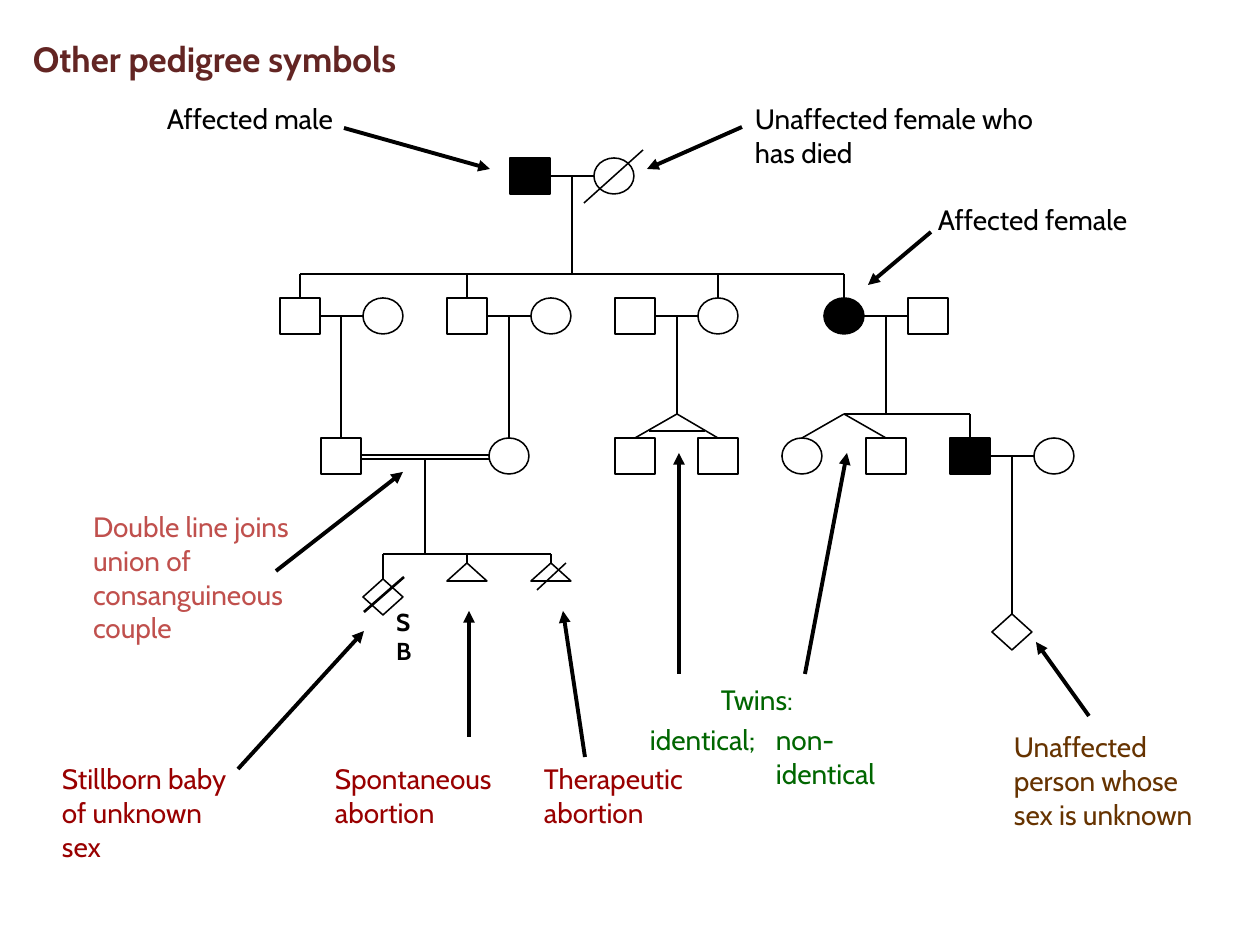
from lxml.etree import SubElement
from pptx import Presentation
from pptx.dml.color import RGBColor
from pptx.enum.shapes import MSO_CONNECTOR, MSO_SHAPE
from pptx.enum.text import MSO_ANCHOR, PP_ALIGN
from pptx.oxml.ns import qn
from pptx.util import Emu, Pt

EMU_PER_PX = 914400 / 126
FONT = "Cabin"
BLACK, WHITE = "000000", "FFFFFF"
MAROON, ROSE, RED, GREEN, BROWN = "632523", "C0504D", "990000", "006600", "663300"
THIN, BOLD = 0.88, 2.25
HALF_W, HALF_H = 20, 18
GENERATION_Y = [176, 316, 456]
SIBSHIP_Y = [274, 414, 554]
SYMBOL_TOP = [y - HALF_H for y in GENERATION_Y]

MALE, FEMALE = MSO_SHAPE.RECTANGLE, MSO_SHAPE.OVAL
UNKNOWN, LOSS = MSO_SHAPE.DIAMOND, MSO_SHAPE.ISOSCELES_TRIANGLE

# (symbol, generation, columns of unaffected people, columns of affected people)
PEOPLE = [
    (MALE, 0, [], [5.5]),
    (FEMALE, 0, [7.5], []),
    (MALE, 1, [0, 4, 8, 15], []),
    (FEMALE, 1, [2, 6, 10], [13]),
    (MALE, 2, [1, 8, 10, 14], [16]),
    (FEMALE, 2, [5, 12, 18], []),
]
# (generation, column of the left partner)
COUPLES = [(0, 5.5), (1, 0), (1, 4), (1, 8), (1, 13), (2, 16)]

# (column, top, bottom)
DESCENTS = [
    (6.5, GENERATION_Y[0], SIBSHIP_Y[0]),
    (1, GENERATION_Y[1], SYMBOL_TOP[2]),
    (5, GENERATION_Y[1], SYMBOL_TOP[2]),
    (9, GENERATION_Y[1], SIBSHIP_Y[1]),
    (14, GENERATION_Y[1], SIBSHIP_Y[1]),
    (3, 459, SIBSHIP_Y[2]),
    (17, GENERATION_Y[2], 614),
]
# (y of the line, first column, last column, {column: bottom of its drop})
SIBSHIPS = [
    (SIBSHIP_Y[0], 0, 13, {c: SYMBOL_TOP[1] for c in (0, 4, 10, 13)}),
    (SIBSHIP_Y[1], 13, 16, {16: SYMBOL_TOP[2]}),
    (SIBSHIP_Y[2], 2, 6, {2: 579, 4: 563, 6: 563}),
]
TWIN_APEXES = [9, 13]

# (start, end, width): died, therapeutic abortion, stillborn
SLASHES = [
    ((584, 203), (643, 150), THIN),
    ((566, 563), (537, 590), THIN),
    ((364, 612), (404, 577), 1.5),
]
POINTERS = [
    ((344, 128), (490, 169)), ((742, 127), (647, 169)),
    ((931, 232), (868, 285)), ((276, 571), (403, 472)),
    ((238, 769), (364, 631)), ((469, 737), (469, 611)),
    ((585, 757), (563, 611)), ((679, 674), (679, 453)),
    ((805, 674), (847, 453)), ((1089, 716), (1036, 642)),
]
# (text, left, top, width, height, colour)
LABELS = [
    ("Double line joins union of consanguineous couple", 93, 510, 205, 136, ROSE),
    ("Stillborn baby of unknown sex", 62, 762, 175, 102, RED),
    ("Spontaneous abortion", 335, 762, 170, 68, RED),
    ("Therapeutic abortion", 544, 762, 155, 68, RED),
    ("Twins:", 721, 683, 80, 34, GREEN),
    ("identical;", 650, 723, 118, 34, GREEN),
    ("non-identical", 776, 723, 125, 68, GREEN),
    ("Unaffected person whose sex is unknown", 1014, 730, 190, 102, BROWN),
]
ANNOTATIONS = [
    ("Affected male", 154, 96, 205, 47),
    ("Unaffected female who has died", 742, 96, 328, 81),
    ("Affected female", 925, 197, 229, 47),
]


def px(length):
    return Emu(round(length * EMU_PER_PX))


def color(hex_code):
    return RGBColor.from_string(hex_code)


def col(index):
    """Centre of a pedigree column, in px."""
    return round(299.5 + 41.9 * index)


def write(frame, text, size=16, rgb=BLACK, bold=False, inset=(0, 0)):
    frame.word_wrap = True
    frame.margin_left = frame.margin_right = px(inset[0])
    frame.margin_top = frame.margin_bottom = px(inset[1])
    paragraph = frame.paragraphs[0]
    paragraph.alignment = PP_ALIGN.LEFT
    run = paragraph.add_run()
    run.text = text
    run.font.name, run.font.size, run.font.bold = FONT, Pt(size), bold
    run.font.color.rgb = color(rgb)


def add_label(slide, text, left, top, width, height, **style):
    box = slide.shapes.add_textbox(px(left), px(top), px(width), px(height))
    write(box.text_frame, text, **style)


def add_title(slide, text):
    title = slide.shapes.title
    title.left, title.top, title.width, title.height = map(px, (20, 29, 916, 59))
    title.fill.solid()
    title.fill.fore_color.rgb = color(WHITE)
    title.text_frame.vertical_anchor = MSO_ANCHOR.MIDDLE
    write(title.text_frame, text, size=20, rgb=MAROON, bold=True, inset=(13, 6))


def add_symbol(slide, kind, column, top, height=2 * HALF_H, fill=None):
    symbol = slide.shapes.add_shape(
        kind, px(col(column) - HALF_W), px(top), px(2 * HALF_W), px(height))
    symbol.shadow.inherit = False
    if fill:
        symbol.fill.solid()
        symbol.fill.fore_color.rgb = color(fill)
    else:
        symbol.fill.background()
    symbol.line.color.rgb = color(BLACK)
    symbol.line.width = Pt(THIN)


def add_line(slide, start, end, width=THIN, arrow=False):
    line = slide.shapes.add_connector(
        MSO_CONNECTOR.STRAIGHT, *map(px, (*start, *end)))
    line.line.color.rgb = color(BLACK)
    line.line.width = Pt(width)
    if arrow:
        SubElement(line.line._get_or_add_ln(), qn("a:tailEnd"), type="triangle")
    SubElement(line._element.spPr, qn("a:effectLst"))


def add_people(slide):
    for kind, generation, unaffected, affected in PEOPLE:
        for columns, fill in ((unaffected, WHITE), (affected, BLACK)):
            for column in columns:
                add_symbol(slide, kind, column, SYMBOL_TOP[generation], fill=fill)
    add_symbol(slide, UNKNOWN, 2, 579)
    add_symbol(slide, UNKNOWN, 17, 614)
    for column in (4, 6):
        add_symbol(slide, LOSS, column, 563, height=HALF_H)


def add_relationships(slide):
    for generation, left in COUPLES:
        y = GENERATION_Y[generation]
        add_line(slide, (col(left) + HALF_W, y), (col(left + 2) - HALF_W, y))
    for y in (455, 459):
        add_line(slide, (col(1) + HALF_W, y), (col(5) - HALF_W, y))
    for column, top, bottom in DESCENTS:
        add_line(slide, (col(column), top), (col(column), bottom))
    for y, first, last, drops in SIBSHIPS:
        add_line(slide, (col(first), y), (col(last), y))
        for column, bottom in drops.items():
            add_line(slide, (col(column), y), (col(column), bottom))
    for apex in TWIN_APEXES:
        for twin in (apex - 1, apex + 1):
            add_line(slide, (col(apex), SIBSHIP_Y[1]), (col(twin), SYMBOL_TOP[2]))
    add_line(slide, (649, 431), (705, 431))


def main():
    prs = Presentation()
    prs.slide_width, prs.slide_height = px(1260), px(945)
    slide = prs.slides.add_slide(prs.slide_layouts[5])
    add_title(slide, "Other pedigree symbols")
    add_people(slide)
    add_relationships(slide)
    for start, end, width in SLASHES:
        add_line(slide, start, end, width=width)
    for start, end in POINTERS:
        add_line(slide, start, end, width=BOLD, arrow=True)
    for text, left, top, width, height, rgb in LABELS:
        add_label(slide, text, left, top, width, height, rgb=rgb)
    for text, *place in ANNOTATIONS:
        add_label(slide, text, *place, inset=(13, 6))
    add_label(slide, "SB", 396, 607, 20, 60, size=14, bold=True)
    prs.save("out.pptx")


if __name__ == "__main__":
    main()
